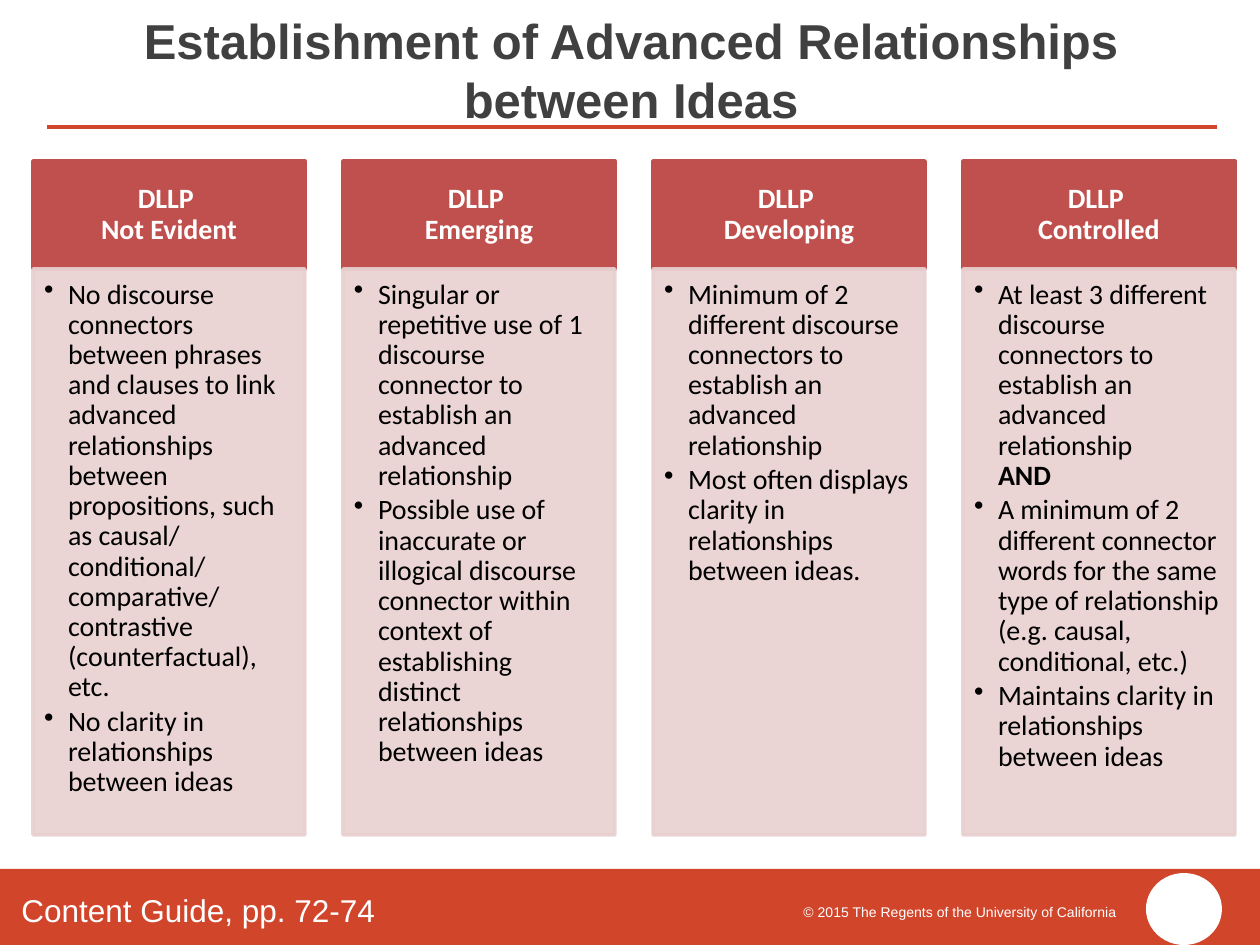
from dataclasses import dataclass
from lxml import etree
from pptx import Presentation, util as u
from pptx.dml.color import RGBColor
from pptx.enum import shapes, text
from pptx.oxml.ns import qn

SCALE = 914400 / 126
Box = tuple[int, int, int, int]


@dataclass(frozen=True)
class Theme:
    brand: str = "D1452B"
    head: str = "C0504D"
    body: str = "E8D0D0"
    title: str = "404040"
    ink: str = "000000"
    white: str = "FFFFFF"
    sans: str = "Arial"
    card: str = "Calibri"
    big: int = 28
    note: int = 18
    copy: int = 16
    small: int = 8
    line: int = 2


@dataclass(frozen=True)
class Level:
    name: str
    points: tuple[str, ...]


@dataclass(frozen=True)
class Style:
    font: str
    size: int
    color: str
    bold: bool = False
    align: text.PP_ALIGN = text.PP_ALIGN.LEFT


T = Theme()
HEAD = Style(T.card, T.copy, T.white, True, text.PP_ALIGN.CENTER)
BODY = Style(T.card, T.copy, T.ink)
LEFT, TOP, WIDTH, PITCH = 33, 161, 272, 310
HEAD_H, BODY_H, INDENT = 108, 566, 24

LEVELS = (
    Level("Not Evident", (
        "No discourse connectors between phrases and clauses to link advanced "
        "relationships between propositions, such as causal/ conditional/ "
        "comparative/ contrastive (counterfactual), etc.",
        "No clarity in relationships between ideas")),
    Level("Emerging", (
        "Singular or repetitive use of 1 discourse connector to establish an "
        "advanced relationship",
        "Possible use of inaccurate or illogical discourse connector within "
        "context of establishing distinct relationships between ideas")),
    Level("Developing", (
        "Minimum of 2 different discourse connectors to establish an advanced "
        "relationship",
        "Most often displays clarity in relationships between ideas.")),
    Level("Controlled", (
        "At least 3 different discourse connectors to establish an advanced "
        "relationship\vAND",
        "A minimum of 2 different connector words for the same type of "
        "relationship (e.g. causal, conditional, etc.)",
        "Maintains clarity in relationships between ideas")),
)


def px(n: int) -> int:
    return round(n * SCALE)


def rgb(color: str) -> RGBColor:
    return RGBColor.from_string(color)


def inset(frame, left: int, top: int, right: int, bottom: int) -> None:
    frame.margin_left, frame.margin_top = px(left), px(top)
    frame.margin_right, frame.margin_bottom = px(right), px(bottom)


def format_para(para, style: Style) -> None:
    para.alignment = style.align
    for run in para.runs:
        font = run.font
        font.name, font.size = style.font, u.Pt(style.size)
        font.bold = style.bold or run.text == "AND"
        font.color.rgb = rgb(style.color)


def add_shape(slide, kind, box: Box, fill: str, edge: bool = False):
    shape = slide.shapes.add_shape(kind, *map(px, box))
    shape.shadow.inherit = False
    shape.fill.solid()
    shape.fill.fore_color.rgb = rgb(fill)
    if edge:
        shape.line.color.rgb = rgb(fill)
        shape.line.width = u.Pt(T.line)
    else:
        shape.line.fill.background()
    return shape


def add_label(slide, box: Box, words: str, style: Style):
    frame = slide.shapes.add_textbox(*map(px, box)).text_frame
    frame.word_wrap = True
    frame.text = words
    format_para(frame.paragraphs[0], style)
    return frame


def add_bullet(para) -> None:
    props = para._p.get_or_add_pPr()
    props.set("marL", str(px(INDENT)))
    props.set("indent", str(-px(INDENT)))
    etree.SubElement(props, qn("a:buChar")).set("char", "•")


def fade(shape) -> None:
    for color in shape._element.spPr.iter(qn("a:srgbClr")):
        etree.SubElement(color, qn("a:alpha")).set("val", "90000")


def add_level(slide, left: int, level: Level) -> None:
    rect = shapes.MSO_SHAPE.RECTANGLE
    head = add_shape(slide, rect, (left, TOP, WIDTH, HEAD_H), T.head, True)
    frame = head.text_frame
    frame.word_wrap = True
    frame.vertical_anchor = text.MSO_ANCHOR.MIDDLE
    inset(frame, 15, 9, 15, 9)
    frame.text = f"DLLP \v{level.name}"
    frame.paragraphs[0].line_spacing = 0.9
    format_para(frame.paragraphs[0], HEAD)

    body = add_shape(slide, rect, (left, TOP + HEAD_H, WIDTH, BODY_H), T.body, True)
    fade(body)
    frame = body.text_frame
    frame.word_wrap = True
    frame.vertical_anchor = text.MSO_ANCHOR.TOP
    inset(frame, 11, 11, 15, 18)
    frame.text = "\n".join(level.points)
    for para in frame.paragraphs:
        add_bullet(para)
        para.level = 1
        para.line_spacing = 0.9
        para.space_after = u.Pt(2.5)
        format_para(para, BODY)


def add_rule(slide, left: int, right: int, y: int) -> None:
    rule = slide.shapes.add_connector(
        shapes.MSO_CONNECTOR.STRAIGHT, px(left), px(y), px(right), px(y))
    rule.line.color.rgb = rgb(T.brand)
    rule.line.width = u.Pt(T.line)
    etree.SubElement(rule._element.spPr, qn("a:effectLst"))


def main() -> None:
    deck = Presentation()
    deck.slide_width, deck.slide_height = px(1260), px(945)
    slide = deck.slides.add_slide(deck.slide_layouts[6])

    add_shape(slide, shapes.MSO_SHAPE.RECTANGLE, (0, 869, 1260, 76), T.brand)
    add_rule(slide, 47, 1217, 127)
    add_shape(slide, shapes.MSO_SHAPE.OVAL, (1146, 873, 76, 72), T.white)
    add_label(slide, (791, 897, 347, 30),
              "© 2015 The Regents of the University of California",
              Style(T.sans, T.small, T.white))

    for i, level in enumerate(LEVELS):
        add_level(slide, LEFT + i * PITCH, level)

    add_label(slide, (9, 885, 956, 50), "Content Guide, pp. 72-74",
              Style(T.sans, T.note, T.white))
    title = add_label(slide, (105, 0, 1052, 100),
                      "Establishment of Advanced Relationships between Ideas",
                      Style(T.sans, T.big, T.title, True, text.PP_ALIGN.CENTER))
    inset(title, 13, 11, 13, 6)
    deck.save("out.pptx")


if __name__ == "__main__":
    main()
